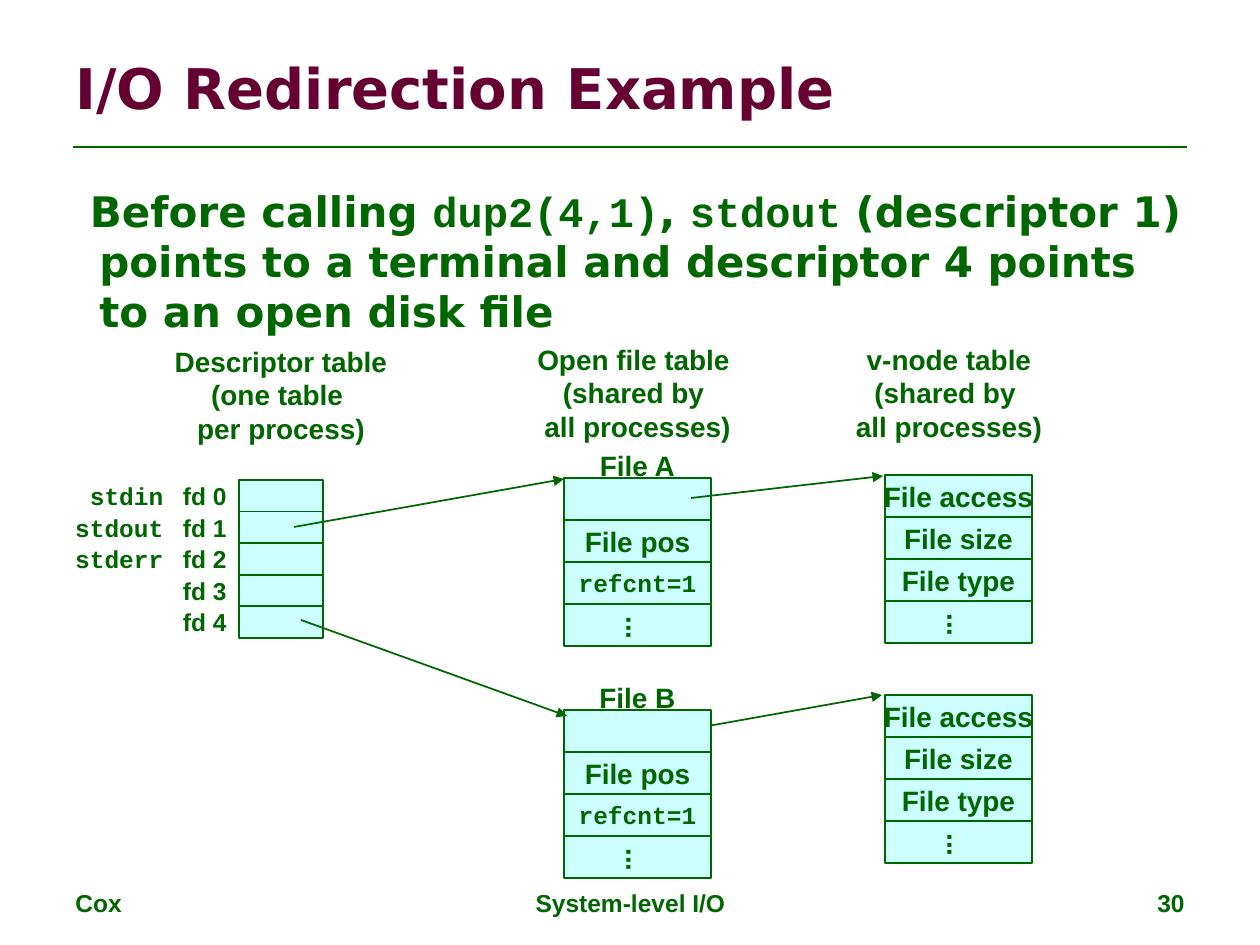
import pptx
import pptx.util
import pptx.dml.color
import pptx.enum.shapes
import pptx.enum.text
import pptx.oxml

PX = 914400 / 126
COLORS = {"text": "006600", "title": "660033", "cell": "CCFFFF"}
SANS, MONO, HEAD = "Arial", "Courier New", "DejaVu Sans"
ALIGN = pptx.enum.text.PP_ALIGN
ANCHOR = pptx.enum.text.MSO_ANCHOR


def emu(px):
    return pptx.util.Emu(round(px * PX))


def rgb(name):
    return pptx.dml.color.RGBColor.from_string(COLORS[name])


def add_run(p, text, size, font=SANS, color="text"):
    r = p.add_run()
    r.text = text
    for key, value in {"size": pptx.util.Pt(size), "name": font, "bold": True}.items():
        setattr(r.font, key, value)
    r.font.color.rgb = rgb(color)


def write(sp, lines, size, font=SANS, color="text", align=ALIGN.CENTER,
          anchor=ANCHOR.MIDDLE, wrap=False):
    tf = sp.text_frame
    for key, value in {"word_wrap": wrap, "vertical_anchor": anchor}.items():
        setattr(tf, key, value)
    for i, line in enumerate(lines):
        p = tf.add_paragraph() if i else tf.paragraphs[0]
        p.alignment = align
        add_run(p, line, size, font, color)


def label(s, box, lines, size, **style):
    sp = s.shapes.add_textbox(*map(emu, box))
    write(sp, lines, size, **style)


def cell(s, box):
    sp = s.shapes.add_shape(pptx.enum.shapes.MSO_SHAPE.RECTANGLE, *map(emu, box))
    sp.shadow.inherit = False
    sp.fill.solid()
    sp.fill.fore_color.rgb = rgb("cell")
    sp.line.color.rgb = rgb("text")
    sp.line.width = pptx.util.Pt(1)
    return sp


def line(s, start, end, width=1, arrow=True):
    sp = s.shapes.add_connector(pptx.enum.shapes.MSO_CONNECTOR.STRAIGHT,
                                *map(emu, start + end))
    sp.line.color.rgb = rgb("text")
    sp.line.width = pptx.util.Pt(width)
    ns = 'xmlns:a="http://schemas.openxmlformats.org/drawingml/2006/main"'
    if arrow:
        sp.line._get_or_add_ln().append(
            pptx.oxml.parse_xml(f'<a:tailEnd {ns} type="triangle"/>'))
    sp._element.spPr.append(pptx.oxml.parse_xml(f"<a:effectLst {ns}/>"))


def header(s, box):
    x, y, w, h = box
    line(s, (x + 10, y + 109), (x + w - 10, y + 109), 1.5, arrow=False)
    label(s, (x, y, w, h), ["I/O Redirection Example"], 32, font=HEAD,
          color="title", align=ALIGN.LEFT, wrap=True)


def statement(s, box):
    sp = s.shapes.add_textbox(*map(emu, box))
    sp.text_frame.word_wrap = True
    p = sp.text_frame.paragraphs[0]
    p.space_before = pptx.util.Pt(1.5)
    pPr = p._p.get_or_add_pPr()
    pPr.set("marL", str(emu(24)))
    pPr.set("indent", str(-emu(24)))
    for text, font in [
        (" Before calling ", HEAD), ("dup2(4,1)", MONO), (", ", HEAD), ("stdout", MONO),
        (" (descriptor 1) points to a terminal and descriptor 4 points"
         " to an open disk file", HEAD),
    ]:
        add_run(p, text, 24, font)


def footer(s, box):
    x, y, w, h = box
    parts = [("Cox", 0, 294, ALIGN.LEFT), ("System-level I/O", 368, 399, ALIGN.CENTER),
             ("30", w - 294, 294, ALIGN.RIGHT)]
    for text, dx, width, align in parts:
        label(s, (x + dx, y, width, h), [text], 14, align=align,
              anchor=ANCHOR.TOP, wrap=True)


def descriptor_table(s, box):
    x, y, w, h = box
    streams = ["stdin", "stdout", "stderr", None, None]
    row = h / len(streams)
    for i, stream in enumerate(streams):
        top = y + i * row
        cell(s, (x, top, w, row))
        label(s, (x - w, top, w, row), [f"fd {i}"], 14, align=ALIGN.RIGHT)
        if stream:
            label(s, (x - 203, top, 140, row), [stream], 14, font=MONO,
                  align=ALIGN.RIGHT)


def record(s, box, fields):
    """Stack one cell per field; "..." is set vertically, code in monospace."""
    x, y, w, h = box
    row = h / len(fields)
    for i, text in enumerate(fields):
        sp = cell(s, (x, y + i * row, w, row))
        if not text:
            continue
        code = "=" in text
        write(sp, [text], 14 if code else 16, font=MONO if code else SANS)
        if text == "...":
            sp.text_frame._txBody.bodyPr.set("vert", "eaVert")


def open_file(s, box, name):
    x, y, w, h = box
    record(s, box, ["", "File pos", "refcnt=1", "..."])
    label(s, (x + 23, y - 36, w - 46, 47), [name], 16)


def v_node(s, box):
    record(s, box, ["File access", "File size", "File type", "..."])


def main():
    prs = pptx.Presentation()
    prs.slide_width, prs.slide_height = emu(1260), emu(945)
    s = prs.slides.add_slide(prs.slide_layouts[6])
    header(s, (63, 38, 1134, 98))
    statement(s, (63, 179, 1134, 665))
    footer(s, (63, 882, 1134, 44))

    shared = ["(shared by ", "all processes)"]
    label(s, (162, 338, 238, 113), ["Descriptor table", "(one table ", "per process)"], 16)
    label(s, (524, 336, 227, 113), ["Open file table ", *shared], 16)
    label(s, (843, 336, 212, 113), ["v-node table", *shared], 16)

    descriptor_table(s, (239, 480, 84, 158))
    line(s, (294, 527), (564, 479))
    line(s, (680, 731), (882, 695))
    open_file(s, (564, 478, 147, 168), "File A")
    open_file(s, (564, 710, 147, 168), "File B")
    line(s, (301, 620), (567, 716))
    line(s, (691, 498), (883, 476))
    v_node(s, (885, 475, 147, 168))
    v_node(s, (885, 695, 147, 168))
    prs.save("out.pptx")


if __name__ == "__main__":
    main()
